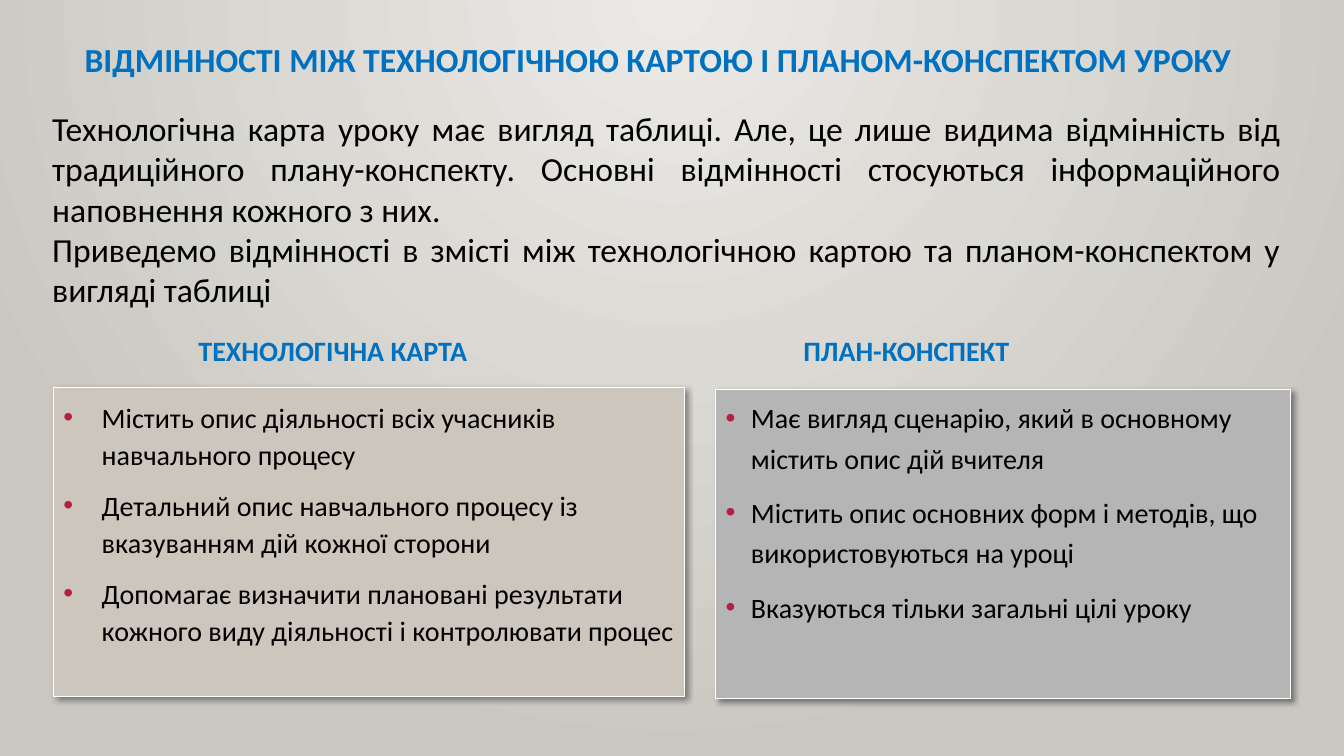
from lxml.etree import SubElement
from pptx import Presentation
from pptx.dml.color import RGBColor
from pptx.enum.shapes import MSO_SHAPE
from pptx.enum.text import MSO_ANCHOR, PP_ALIGN
from pptx.oxml import parse_xml
from pptx.oxml.ns import qn
from pptx.util import Inches, Pt

BLUE = RGBColor(0x00, 0x70, 0xC0)
BLACK = RGBColor(0, 0, 0)
WHITE = RGBColor(255, 255, 255)
GRAY = RGBColor(0xB5, 0xB5, 0xB5)
SAND = RGBColor(0xCC, 0xC6, 0xBC)
NS = 'xmlns:a="http://schemas.openxmlformats.org/drawingml/2006/main"'

deck = Presentation()
deck.slide_width = Inches(13.33)
deck.slide_height = Inches(7.5)
col = deck.slide_width / 100
row = deck.slide_height / 100
slide = deck.slides.add_slide(deck.slide_layouts[6])


def place(x, y, wide, high):
    return int(x * col), int(y * row), int(wide * col), int(high * row)


def write(para, text, size, color, bold=False):
    run = para.add_run()
    run.text = text
    run.font.name = "Calibri"
    run.font.size = Pt(size)
    run.font.bold = bold
    run.font.color.rgb = color


back = slide.background.fill
back.gradient()
for stop, tint in zip(back.gradient_stops, ("ECEAE7", "CAC7C1")):
    stop.color.rgb = RGBColor.from_string(tint)
back.gradient_stops[0].position = 0
back.gradient_stops[1].position = 1
grad = slide.element.find(".//" + qn("a:gradFill"))
grad.replace(grad.find(qn("a:lin")), parse_xml(
    f'<a:path {NS} path="circle">'
    '<a:fillToRect l="43000" t="0" r="43000" b="100000"/></a:path>'))

texts = [
    ((5.55, -2, 90.55, 12.53), 24, BLUE, PP_ALIGN.JUSTIFY,
     ["ВІДМІННОСТІ МІЖ ТЕХНОЛОГІЧНОЮ КАРТОЮ І ПЛАНОМ-КОНСПЕКТОМ УРОКУ"]),
    ((3.15, 13.6, 92.87, 28.27), 24, BLACK, PP_ALIGN.JUSTIFY,
     ["Технологічна карта уроку має вигляд таблиці. Але, це лише видима "
      "відмінність від традиційного плану-конспекту. Основні відмінності "
      "стосуються інформаційного наповнення кожного з них.",
      "Приведемо відмінності в змісті між технологічною картою та "
      "планом-конспектом у вигляді таблиці"]),
    ((14.03, 40.13, 72.92, 8.53), 20, BLUE, PP_ALIGN.LEFT,
     ["ТЕХНОЛОГІЧНА КАРТА\tПЛАН-КОНСПЕКТ"]),
]
for area, size, color, align, lines in texts:
    frame = slide.shapes.add_textbox(*place(*area)).text_frame
    frame.word_wrap = True
    head = color == BLUE
    if head:
        frame.vertical_anchor = MSO_ANCHOR.BOTTOM
        frame.margin_bottom = 0
    for num, line in enumerate(lines):
        para = frame.add_paragraph() if num else frame.paragraphs[0]
        para.alignment = align
        if head:
            para.line_spacing = 0.9
        if "\t" in line:
            tabs = SubElement(para._p.get_or_add_pPr(), qn("a:tabLst"))
            SubElement(tabs, qn("a:tab"), pos=str(int(45 * col)), algn="l")
        write(para, line, size, color, head)

cards = [
    ((53.26, 51.47, 42.76, 40.93), GRAY, 0.05, 0.25, 1.2,
     ["Має вигляд сценарію, який в основному містить опис дій вчителя",
      "Містить опис основних форм і методів, що використовуються на уроці",
      "Вказуються тільки загальні цілі уроку"]),
    ((3.98, 51.2, 46.96, 40.93), SAND, 0.1, 0.38, 1.1,
     ["Містить опис діяльності всіх учасників навчального процесу",
      "Детальний опис навчального процесу із вказуванням дій кожної сторони",
      "Допомагає визначити плановані результати кожного виду діяльності "
      "і контролювати процес"]),
]
for area, fill, inset, dent, lead, lines in cards:
    card = slide.shapes.add_shape(MSO_SHAPE.RECTANGLE, *place(*area))
    card.fill.solid()
    card.fill.fore_color.rgb = fill
    card.line.color.rgb = WHITE
    card.line.width = Pt(0.75)
    card.shadow.inherit = False
    glow = card._element.spPr.find(qn("a:effectLst"))
    glow.append(parse_xml(
        f'<a:outerShdw {NS} blurRad="{Pt(4)}" dist="{Pt(3)}" dir="2700000" '
        'algn="tl" rotWithShape="0"><a:srgbClr val="000000">'
        '<a:alpha val="40000"/></a:srgbClr></a:outerShdw>'))
    frame = card.text_frame
    frame.word_wrap = True
    frame.vertical_anchor = MSO_ANCHOR.TOP
    frame.margin_top = frame.margin_bottom = Inches(inset)
    for num, line in enumerate(lines):
        para = frame.add_paragraph() if num else frame.paragraphs[0]
        para.alignment = PP_ALIGN.LEFT
        para.line_spacing = lead
        para.space_before = Pt(10 if num else 0)
        props = para._p.get_or_add_pPr()
        props.set("marL", str(Inches(dent)))
        props.set("indent", str(-Inches(dent)))
        tint = SubElement(props, qn("a:buClr"))
        SubElement(tint, qn("a:srgbClr"), val="B71E42")
        SubElement(props, qn("a:buFont"), typeface="Arial")
        SubElement(props, qn("a:buChar"), char="•")
        write(para, line, 20, BLACK)

deck.save("out.pptx")
